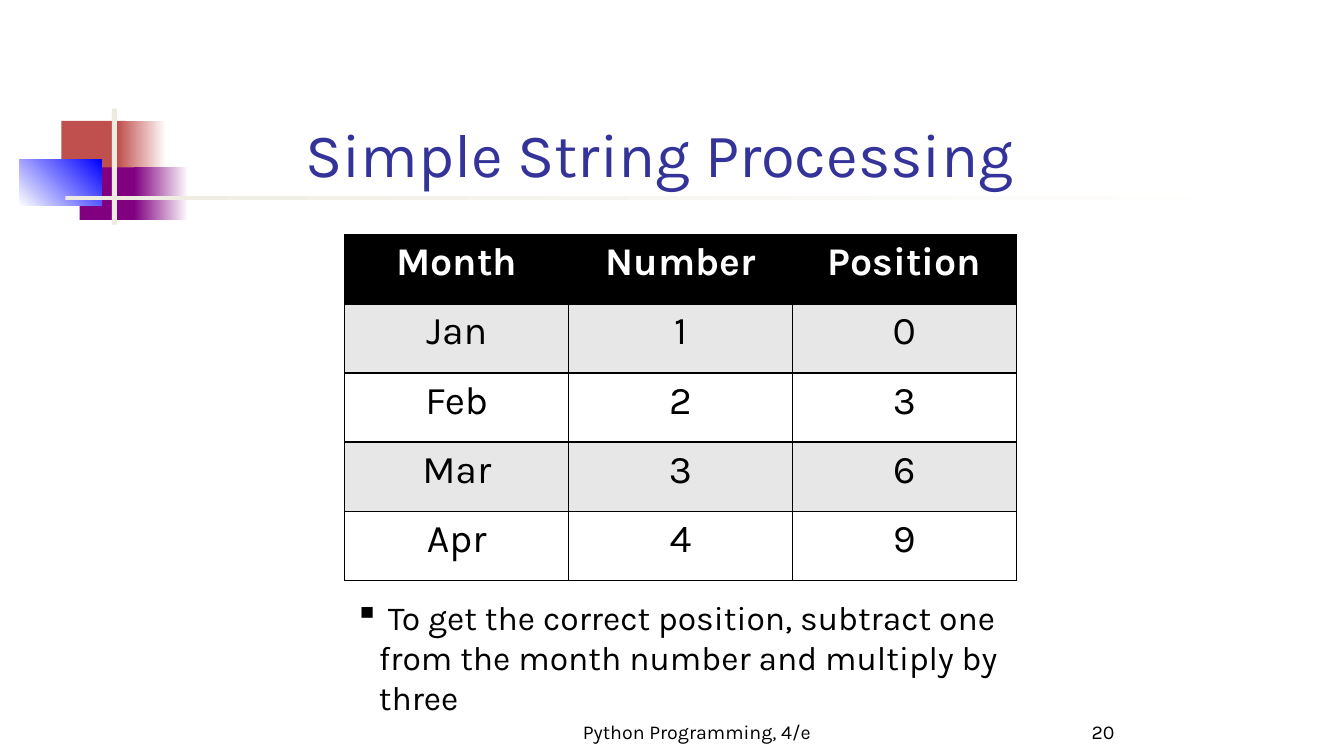
from lxml.etree import SubElement
from pptx import Presentation
from pptx.dml.color import RGBColor
from pptx.enum.shapes import MSO_SHAPE
from pptx.enum.text import MSO_ANCHOR, PP_ALIGN
from pptx.oxml.ns import qn
from pptx.util import Cm, Pt

BLACK = RGBColor(0x00, 0x00, 0x00)
WHITE = RGBColor(0xFF, 0xFF, 0xFF)
GREY = RGBColor(0xE7, 0xE7, 0xE7)
RED = RGBColor(0xC0, 0x50, 0x4D)
PURPLE = RGBColor(0x80, 0x00, 0x80)
BLUE = RGBColor(0x00, 0x00, 0xFF)
CREAM = RGBColor(0xEE, 0xEC, 0xE1)
INDIGO = RGBColor(0x33, 0x33, 0x99)


class Painter:
    font = "Karla"
    border = Pt(0.96)

    def __init__(self, slide):
        self.slide = slide

    def style(self, para, size, color, align, bold=False):
        para.alignment = align
        for run in para.runs:
            run.font.name = self.font
            run.font.size = Pt(size)
            run.font.bold = bold
            run.font.color.rgb = color

    def block(self, box, color, end=None, angle=0):
        shape = self.slide.shapes.add_shape(MSO_SHAPE.RECTANGLE, *map(Cm, box))
        shape.shadow.inherit = False
        shape.line.fill.background()
        if end is None:
            shape.fill.solid()
            shape.fill.fore_color.rgb = color
        else:
            shape.fill.gradient()
            shape.fill.gradient_angle = angle
            for stop, tone in zip(shape.fill.gradient_stops, (color, end)):
                stop.color.rgb = tone

    def text(self, box, words, size, color=BLACK, align=PP_ALIGN.LEFT,
             anchor=MSO_ANCHOR.BOTTOM):
        frame = self.slide.shapes.add_textbox(*map(Cm, box)).text_frame
        frame.word_wrap = True
        frame.vertical_anchor = anchor
        frame.text = words
        para = frame.paragraphs[0]
        self.style(para, size, color, align)
        return para

    def bullet(self, box, words, size, mark, indent):
        para = self.text(box, words, size, anchor=MSO_ANCHOR.TOP)
        props = para._p.get_or_add_pPr()
        props.set("marL", str(Cm(indent)))
        props.set("indent", str(-Cm(indent)))
        tint = SubElement(props, qn("a:buClr"))
        SubElement(tint, qn("a:srgbClr"), val=str(BLACK))
        SubElement(props, qn("a:buChar"), char=mark)

    def frame(self, cell):
        props = cell._tc.get_or_add_tcPr()
        for side in ("lnL", "lnR", "lnT", "lnB"):
            line = SubElement(props, qn("a:" + side), w=str(self.border))
            fill = SubElement(line, qn("a:solidFill"))
            SubElement(fill, qn("a:srgbClr"), val=str(BLACK))

    def table(self, left, top, width, height, rows, size):
        count = len(rows), len(rows[0])
        box = map(Cm, (left, top, width * count[1], height * count[0]))
        grid = self.slide.shapes.add_table(*count, *box).table
        for column in grid.columns:
            column.width = Cm(width)
        for index, values in enumerate(rows):
            grid.rows[index].height = Cm(height)
            head = index == 0
            back = BLACK if head else GREY if index % 2 else WHITE
            for cell, value in zip(grid.rows[index].cells, values):
                cell.text_frame.text = str(value)
                self.style(cell.text_frame.paragraphs[0], size,
                           WHITE if head else BLACK, PP_ALIGN.CENTER, head)
                self.frame(cell)
                cell.fill.solid()
                cell.fill.fore_color.rgb = back


def main():
    deck = Presentation()
    deck.slide_width = Cm(33.87)
    deck.slide_height = Cm(19.05)
    paint = Painter(deck.slides.add_slide(deck.slide_layouts[6]))

    paint.block((1.55, 3.05, 1.63, 1.32), RED)
    paint.block((2.97, 3.05, 1.22, 1.32), RED, WHITE)
    paint.block((2.01, 4.22, 1.55, 1.32), PURPLE)
    paint.block((3.38, 4.22, 1.37, 1.32), PURPLE, WHITE)
    paint.block((0.48, 4.01, 2.08, 1.17), WHITE, BLUE, 45)
    paint.block((2.82, 2.74, 0.13, 2.92), CREAM)
    paint.block((1.65, 4.95, 30.45, 0.08), CREAM, WHITE)

    paint.text((13.54, 17.58, 8.05, 1.27), "Python Programming, 4/e", 14,
               align=PP_ALIGN.CENTER)
    paint.text((23.06, 17.58, 5.28, 1.27), "20", 14, align=PP_ALIGN.RIGHT)
    paint.text((7.44, 1.73, 21.64, 3.18), "Simple String Processing", 44, INDIGO)

    months = ("Jan", "Feb", "Mar", "Apr")
    rows = [("Month", "Number", "Position")]
    rows += [(month, place + 1, place * 3) for place, month in enumerate(months)]
    paint.table(8.69, 5.92, 5.64, 1.74, rows, 28)
    paint.bullet((8.69, 14.91, 17.35, 3.3),
                 " To get the correct position, subtract one from the month "
                 "number and multiply by three", 24, "▪", 0.61)

    deck.save("out.pptx")


if __name__ == "__main__":
    main()
